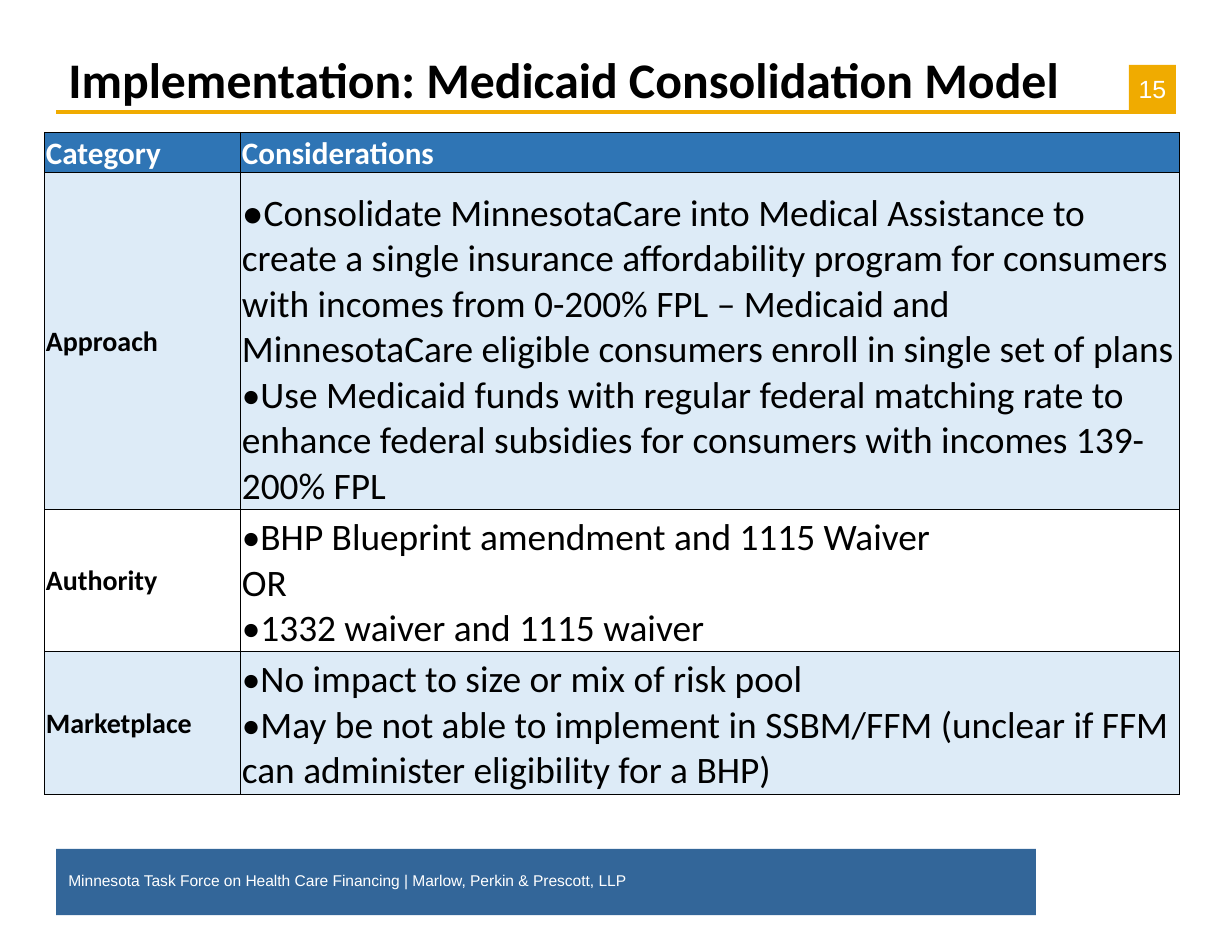
from dataclasses import dataclass

from lxml import etree
from pptx import Presentation
from pptx import dml  # noqa: F401
from pptx import util as u
from pptx.dml import color
from pptx.enum import shapes, text
from pptx.oxml import ns


@dataclass(frozen=True)
class Theme:
    gold: str = "F0AB00"
    footer_blue: str = "336699"
    header_blue: str = "2F75B5"
    band_blue: str = "DDEBF7"
    black: str = "000000"
    white: str = "FFFFFF"
    heading_font: str = "Calibri"
    footer_font: str = "Arial"
    title_size: int = 32
    header_size: int = 20
    category_size: int = 18
    body_size: int = 24
    number_size: int = 16
    footer_size: int = 10
    rule_width: float = 2
    border_width: float = 0.5


THEME = Theme()

COLUMN_WIDTHS = (1.75, 8.38)
ROW_HEIGHTS = (0.36, 3.01, 1.27, 1.27)
HEADERS = ("Category", "Considerations")
# Each consideration is (bullet size in percent, or None for no bullet; wording).
ROWS = (
    ("Approach", (
        (117, "Consolidate MinnesotaCare into Medical Assistance to create a single "
              "insurance affordability program for consumers with incomes from 0-200% FPL – "
              "Medicaid and MinnesotaCare eligible consumers enroll in single set of plans"),
        (100, "Use Medicaid funds with regular federal matching rate to enhance federal "
              "subsidies for consumers with incomes 139-200% FPL"),
    )),
    ("Authority", (
        (100, "BHP Blueprint amendment and 1115 Waiver"),
        (None, "OR"),
        (100, "1332 waiver and 1115 waiver"),
    )),
    ("Marketplace", (
        (100, "No impact to size or mix of risk pool"),
        (100, "May be not able to implement in SSBM/FFM (unclear if FFM can administer "
              "eligibility for a BHP)"),
    )),
)


def rgb(value):
    return color.RGBColor.from_string(value)


def apply(target, values):
    for name, value in values.items():
        setattr(target, name, value)


def margins(left, top, right, bottom):
    sides = ("left", "top", "right", "bottom")
    return {f"margin_{side}": u.Inches(size)
            for side, size in zip(sides, (left, top, right, bottom))}


def write(paragraph, wording, size, ink, font=THEME.heading_font, bold=False):
    run = paragraph.add_run()
    run.text = wording
    apply(run.font, {"size": u.Pt(size), "name": font, "bold": bold})
    run.font.color.rgb = rgb(ink)


def add_bullet(paragraph, percent):
    """Give the paragraph a bullet that its text follows without a gap."""
    properties = paragraph._p.get_or_add_pPr()
    apply_attributes = {"marL": "0", "indent": "0"}
    for name, value in apply_attributes.items():
        properties.set(name, value)
    for tag, name, value in (("a:buSzPct", "val", str(percent * 1000)),
                             ("a:buFont", "typeface", THEME.heading_font),
                             ("a:buChar", "char", "•")):
        etree.SubElement(properties, ns.qn(tag)).set(name, value)


def add_borders(cell):
    properties = cell._tc.get_or_add_tcPr()
    for side in ("a:lnL", "a:lnR", "a:lnT", "a:lnB"):
        line = etree.SubElement(properties, ns.qn(side), w=str(u.Pt(THEME.border_width)))
        fill = etree.SubElement(line, ns.qn("a:solidFill"))
        etree.SubElement(fill, ns.qn("a:srgbClr"), val=THEME.black)


def add_block(slide, left, top, width, height, fill):
    block = slide.shapes.add_shape(
        shapes.MSO_SHAPE.RECTANGLE, *map(u.Inches, (left, top, width, height)))
    block.shadow.inherit = False
    block.fill.solid()
    block.fill.fore_color.rgb = rgb(fill)
    block.line.fill.background()
    return block


def add_rule(slide, left, right, y):
    rule = slide.shapes.add_connector(
        shapes.MSO_CONNECTOR.STRAIGHT, *map(u.Inches, (left, y, right, y)))
    rule.line.color.rgb = rgb(THEME.gold)
    rule.line.width = u.Pt(THEME.rule_width)
    etree.SubElement(rule._element.spPr, ns.qn("a:effectLst"))


def add_text(slide, left, top, width, height, insets, anchor):
    """Add an empty text box and return its first paragraph."""
    box = slide.shapes.add_textbox(*map(u.Inches, (left, top, width, height)))
    apply(box.text_frame, {"word_wrap": True, "vertical_anchor": anchor, **margins(*insets)})
    return box.text_frame.paragraphs[0]


def add_page_number(slide, number):
    block = add_block(slide, 10.08, 0.58, 0.42, 0.42, THEME.gold)
    apply(block.text_frame, {"word_wrap": False, "vertical_anchor": text.MSO_ANCHOR.MIDDLE,
                             **margins(0, 0, 0, 0)})
    paragraph = block.text_frame.paragraphs[0]
    paragraph.alignment = text.PP_ALIGN.CENTER
    write(paragraph, number, THEME.number_size, THEME.white, THEME.footer_font)


def format_cell(cell, anchor, fill):
    apply(cell, {"vertical_anchor": anchor, **margins(0.01, 0.01, 0.01, 0)})
    add_borders(cell)
    if fill:
        cell.fill.solid()
        cell.fill.fore_color.rgb = rgb(fill)
    else:
        cell.fill.background()


def add_considerations(cell, considerations):
    frame = cell.text_frame
    for index, (percent, wording) in enumerate(considerations):
        paragraph = frame.add_paragraph() if index else frame.paragraphs[0]
        if percent:
            add_bullet(paragraph, percent)
        write(paragraph, wording, THEME.body_size, THEME.black)


def add_model_table(slide):
    frame = slide.shapes.add_table(
        len(ROW_HEIGHTS), len(COLUMN_WIDTHS), u.Inches(0.4), u.Inches(1.18),
        u.Inches(sum(COLUMN_WIDTHS)), u.Inches(sum(ROW_HEIGHTS)))
    table = frame.table
    apply(table, {"first_row": False, "horz_banding": False})
    for column, width in zip(table.columns, COLUMN_WIDTHS):
        column.width = u.Inches(width)
    for row, height in zip(table.rows, ROW_HEIGHTS):
        row.height = u.Inches(height)

    for index, header in enumerate(HEADERS):
        cell = table.cell(0, index)
        format_cell(cell, text.MSO_ANCHOR.BOTTOM, THEME.header_blue)
        write(cell.text_frame.paragraphs[0], header, THEME.header_size, THEME.white, bold=True)
    for index, (category, considerations) in enumerate(ROWS, start=1):
        fill = THEME.band_blue if index % 2 else None
        label, body = table.cell(index, 0), table.cell(index, 1)
        format_cell(label, text.MSO_ANCHOR.MIDDLE, fill)
        write(label.text_frame.paragraphs[0], category, THEME.category_size, THEME.black,
              bold=True)
        format_cell(body, text.MSO_ANCHOR.BOTTOM, fill)
        add_considerations(body, considerations)


def main():
    presentation = Presentation()
    apply(presentation, {"slide_width": u.Inches(11), "slide_height": u.Inches(8.5)})
    slide = presentation.slides.add_slide(presentation.slide_layouts[6])

    add_block(slide, 0.5, 7.58, 8.75, 0.59, THEME.footer_blue)
    add_rule(slide, 0.5, 10.5, 1)
    add_page_number(slide, "15")
    title = add_text(slide, 0.5, 0.38, 9.58, 0.65, (0.11, 0.06, 0.11, 0.06),
                     text.MSO_ANCHOR.BOTTOM)
    write(title, "Implementation: Medicaid Consolidation Model", THEME.title_size,
          THEME.black, bold=True)
    add_model_table(slide)
    footer = add_text(slide, 0.5, 7.75, 7.08, 0.25, (0.11, 0, 0, 0), text.MSO_ANCHOR.MIDDLE)
    footer.line_spacing = 0.8
    write(footer, "Minnesota Task Force on Health Care Financing | Marlow, Perkin & Prescott, LLP",
          THEME.footer_size, THEME.white, THEME.footer_font)

    presentation.save("out.pptx")


if __name__ == "__main__":
    main()
